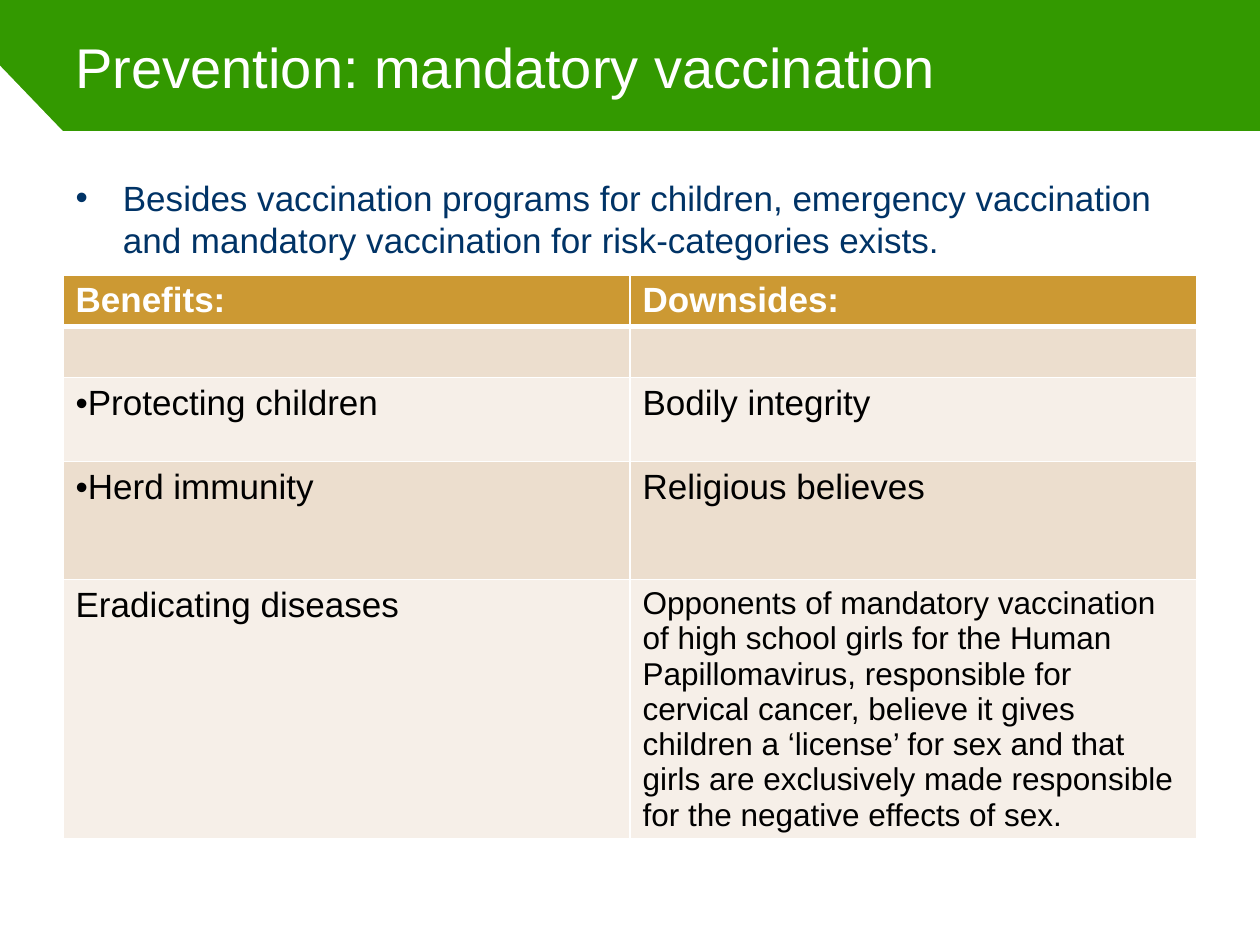
import pptx
import pptx.util
import pptx.dml.color
import pptx.enum.text
import pptx.oxml
import pptx.oxml.ns

Pt = pptx.util.Pt
ROWS = [
    ("Benefits:", "Downsides:"),
    ("", ""),
    ("Protecting children", "Bodily integrity"),
    ("Herd immunity", "Religious believes"),
    ("Eradicating diseases",
     "Opponents of mandatory vaccination of high school girls for the Human "
     "Papillomavirus, responsible for cervical cancer, believe it gives children "
     "a ‘license’ for sex and that girls are exclusively made responsible for "
     "the negative effects of sex."),
]
ROW_HEIGHTS = [29.25, 29.25, 48, 67.5, 148]
BULLETED = {(2, 0), (3, 0)}
SMALL = {(4, 1)}


def rgb(color):
    return pptx.dml.color.RGBColor.from_string(color)


def place(sp, x, y, w, h):
    sp.left, sp.top, sp.width, sp.height = Pt(x), Pt(y), Pt(w), Pt(h)


def add_run(p, text, size, color, bold=False):
    r = p.add_run()
    r.text = text
    r.font.name = "Arial"
    r.font.size = Pt(size)
    r.font.bold = bold
    r.font.color.rgb = rgb(color)


def set_bullet(p, indent):
    pPr = p._p.get_or_add_pPr()
    pPr.set("marL", str(Pt(indent)))
    pPr.set("indent", str(-Pt(indent)))
    for tag, name, value in (("buFont", "typeface", "Arial"), ("buChar", "char", "•")):
        el = pptx.oxml.parse_xml(f'<a:{tag} {pptx.oxml.ns.nsdecls("a")} {name}="{value}"/>')
        pPr.append(el)


def set_borders(cell, bottom, top):
    tcPr = cell._tc.get_or_add_tcPr()
    for side, width in (("L", 1), ("R", 1), ("T", top), ("B", bottom)):
        tcPr.append(pptx.oxml.parse_xml(
            f'<a:ln{side} {pptx.oxml.ns.nsdecls("a")} w="{Pt(width)}">'
            f'<a:solidFill><a:srgbClr val="FFFFFF"/></a:solidFill></a:ln{side}>'))


def add_page(s, x, y, w, h):
    # White page with a cut corner, below the green band
    band, cut = 37.5, 36
    fb = s.shapes.build_freeform(Pt(x + cut), Pt(y + band), scale=1.0)
    fb.add_line_segments([(Pt(px), Pt(py)) for px, py in (
        (x, y), (x, y + h), (x + w, y + h), (x + w, y + band))], close=True)
    sp = fb.convert_to_shape()
    sp.shadow.inherit = False
    sp.fill.solid()
    sp.fill.fore_color.rgb = rgb("FFFFFF")
    sp.line.fill.background()
    # Keep the page behind the placeholders
    s.shapes._spTree.insert(2, sp._element)


def fill_title(s, x, y, w, h):
    sp = s.shapes.title
    place(sp, x, y, w, h)
    tf = sp.text_frame
    tf.vertical_anchor = pptx.enum.text.MSO_ANCHOR.MIDDLE
    p = tf.paragraphs[0]
    p.alignment = pptx.enum.text.PP_ALIGN.LEFT
    add_run(p, "Prevention: mandatory vaccination", 32, "FFFFFF")


def fill_body(s, x, y, w, h):
    sp = s.placeholders[1]
    place(sp, x, y, w, h)
    tf = sp.text_frame
    tf.auto_size = pptx.enum.text.MSO_AUTO_SIZE.NONE
    p = tf.paragraphs[0]
    p.space_before, p.space_after = Pt(0), Pt(6)
    set_bullet(p, 27)
    add_run(p, "Besides vaccination programs for children, emergency vaccination "
               "and mandatory vaccination for risk-categories exists.", 20, "003366")


def add_comparison(s, x, y, w):
    shape = s.shapes.add_table(len(ROWS), 2, Pt(x), Pt(y), Pt(w), Pt(sum(ROW_HEIGHTS)))
    table = shape.table
    for col in table.columns:
        col.width = Pt(w / 2)
    for i, texts in enumerate(ROWS):
        table.rows[i].height = Pt(ROW_HEIGHTS[i])
        header = i == 0
        fill = "CC9933" if header else ("F6EFE8", "ECDECE")[i % 2]
        for j, text in enumerate(texts):
            cell = table.cell(i, j)
            set_borders(cell, bottom=3 if header else 1, top=3 if i == 1 else 1)
            cell.fill.solid()
            cell.fill.fore_color.rgb = rgb(fill)
            p = cell.text_frame.paragraphs[0]
            if (i, j) in BULLETED:
                set_bullet(p, 0)
            if text:
                add_run(p, text, 18 if (i, j) in SMALL else 20,
                        "FFFFFF" if header else "000000", bold=header)


def main():
    prs = pptx.Presentation()
    prs.slide_width, prs.slide_height = Pt(720), Pt(540)
    s = prs.slides.add_slide(prs.slide_layouts[1])
    s.background.fill.solid()
    s.background.fill.fore_color.rgb = rgb("339900")
    add_page(s, 0, 37.5, 720, 502.5)
    fill_title(s, 36, 0, 648, 75)
    fill_body(s, 36, 97.5, 648, 368.5)
    add_comparison(s, 36, 157, 648)
    prs.save("out.pptx")


if __name__ == "__main__":
    main()
